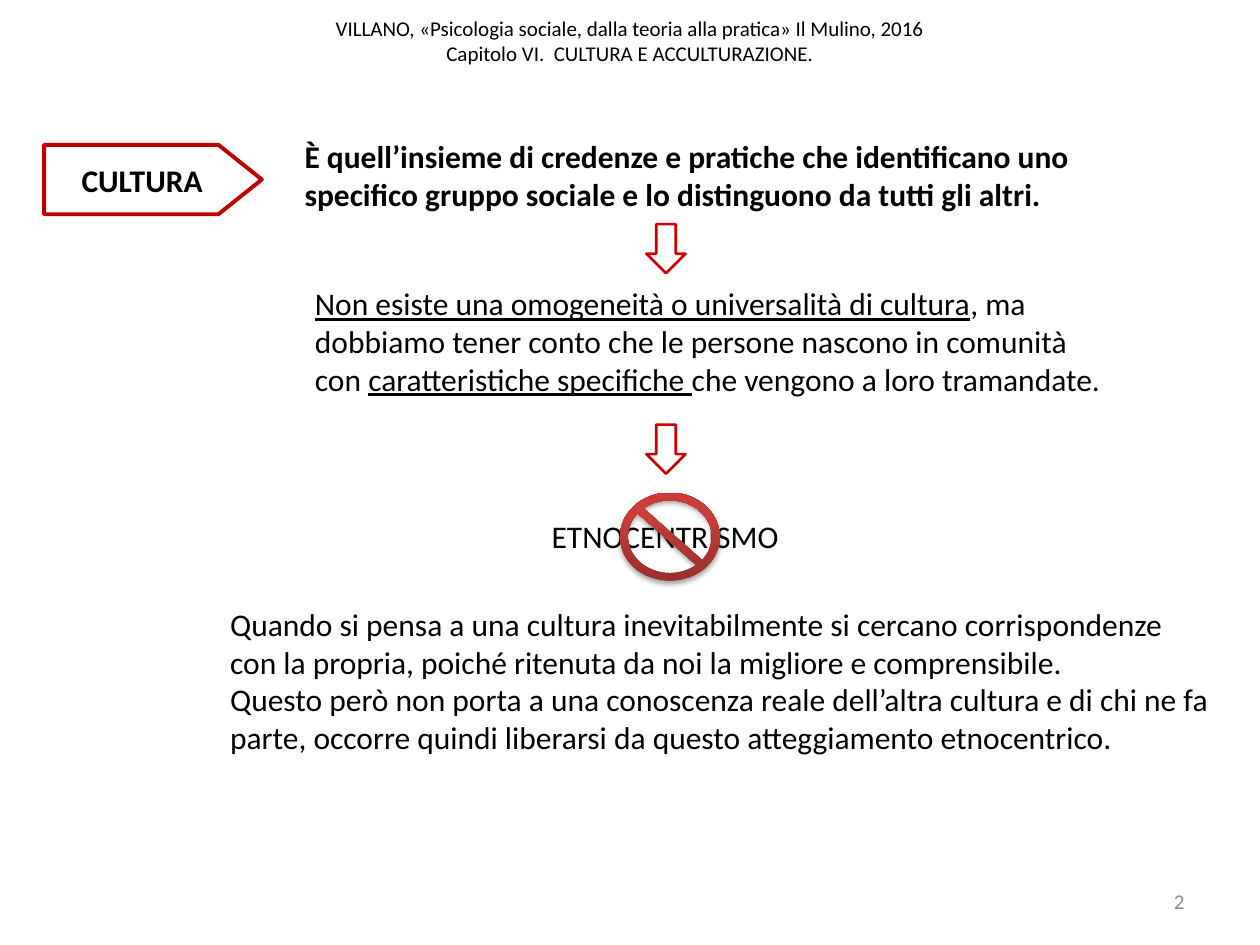
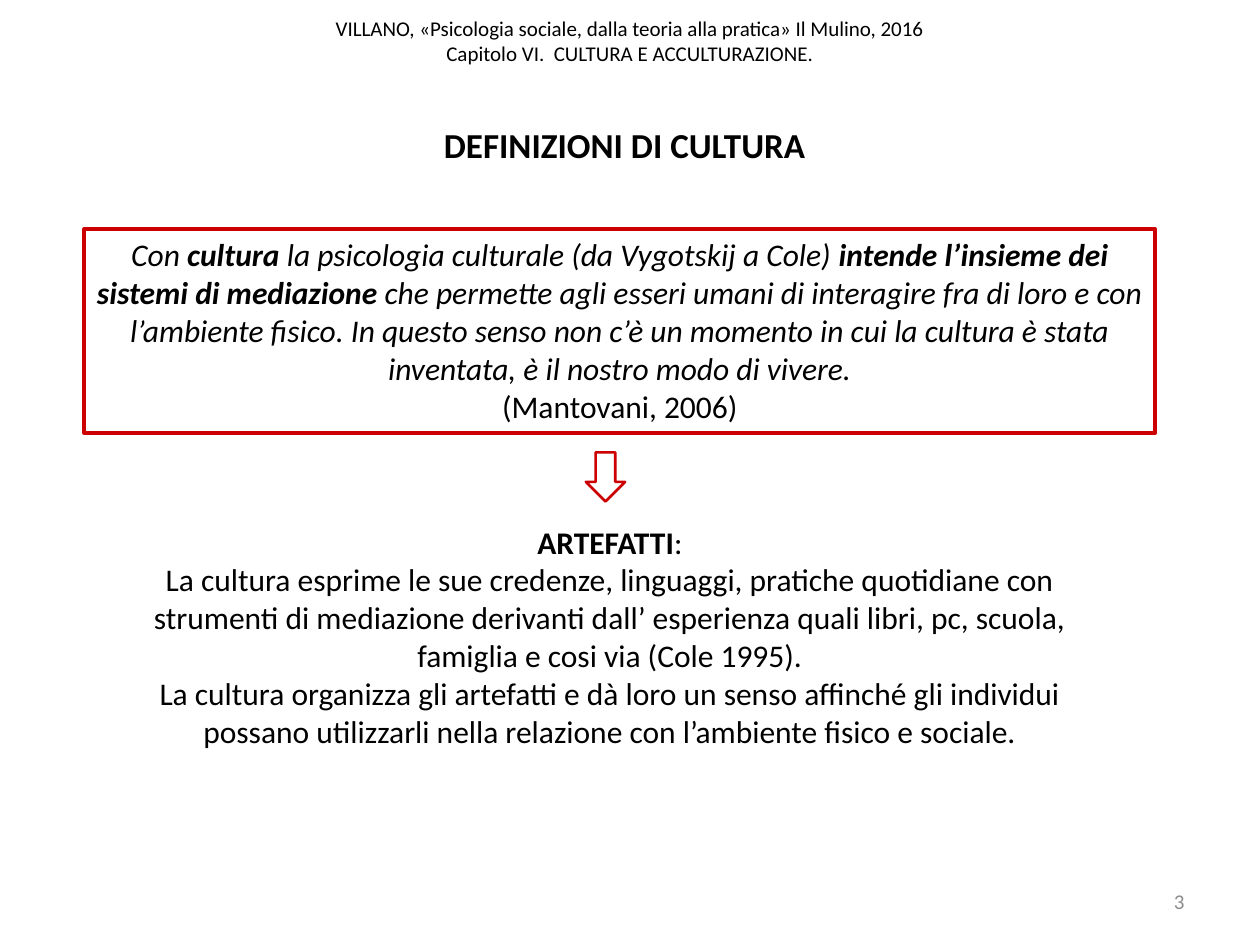
"""Build two slides on culture and acculturation."""
from dataclasses import dataclass

from lxml.etree import SubElement
from pptx import Presentation
from pptx.dml.color import RGBColor
from pptx.enum.shapes import MSO_SHAPE
from pptx.enum.text import MSO_ANCHOR, MSO_AUTO_SIZE, PP_ALIGN
from pptx.oxml import parse_xml
from pptx.oxml.ns import nsdecls, qn
from pptx.util import Cm, Pt

FONT = "Calibri"
BLACK, GREY, RED, DARK_RED = "000000", "8C8C8C", "CC0000", "C00000"
BAN_STOPS = ((0, "9C2F2D"), (80, "CB3E3A"), (100, "CE3B37"))
HEADER = (
    "VILLANO, «Psicologia sociale, dalla teoria alla pratica» Il Mulino, 2016",
    "Capitolo VI.  CULTURA E ACCULTURAZIONE.",
)


@dataclass(frozen=True)
class Box:
    """Place and size in centimetres."""
    left: float
    top: float
    width: float
    height: float

    def lengths(self) -> tuple:
        """Return the four lengths for python-pptx."""
        return Cm(self.left), Cm(self.top), Cm(self.width), Cm(self.height)


@dataclass(frozen=True)
class Run:
    """A piece of text with one style."""
    text: str
    bold: bool = False
    italic: bool = False
    underline: bool = False


@dataclass(frozen=True)
class Style:
    """The look of a whole text."""
    size: int = 18
    color: str = BLACK
    align: PP_ALIGN = PP_ALIGN.LEFT
    anchor: MSO_ANCHOR = MSO_ANCHOR.TOP
    wrap: bool = True


BODY = Style()
CENTERED = Style(align=PP_ALIGN.CENTER)
LABEL = Style(align=PP_ALIGN.CENTER, anchor=MSO_ANCHOR.MIDDLE)
TITLE = Style(size=20, align=PP_ALIGN.CENTER)
HEADER_STYLE = Style(size=12, align=PP_ALIGN.CENTER, anchor=MSO_ANCHOR.MIDDLE)
NUMBER_STYLE = Style(size=12, color=GREY, align=PP_ALIGN.RIGHT, anchor=MSO_ANCHOR.MIDDLE)


def rgb(color: str) -> RGBColor:
    """Turn a hex string into a colour."""
    return RGBColor.from_string(color)


def write(sp, paragraphs: list[list[Run]], style: Style) -> None:
    """Fill a shape with styled paragraphs."""
    tf = sp.text_frame
    tf.auto_size = MSO_AUTO_SIZE.NONE
    tf.word_wrap = style.wrap
    tf.vertical_anchor = style.anchor
    for i, runs in enumerate(paragraphs):
        p = tf.add_paragraph() if i else tf.paragraphs[0]
        p.alignment = style.align
        for run in runs:
            r = p.add_run()
            r.text = run.text
            font = r.font
            font.name, font.size = FONT, Pt(style.size)
            font.bold, font.italic, font.underline = run.bold, run.italic, run.underline
            font.color.rgb = rgb(style.color)


def add_text(s, box: Box, paragraphs: list[list[Run]], style: Style = BODY) -> None:
    """Add a text box."""
    write(s.shapes.add_textbox(*box.lengths()), paragraphs, style)


def add_outline(s, kind: MSO_SHAPE, box: Box, color: str, weight: float):
    """Add an unfilled shape with a coloured line."""
    sp = s.shapes.add_shape(kind, *box.lengths())
    sp.shadow.inherit = False
    sp.fill.background()
    sp.line.color.rgb = rgb(color)
    sp.line.width = Pt(weight)
    return sp


def add_arrow(s, left: float, top: float) -> None:
    """Add a small arrow that points down."""
    sp = add_outline(s, MSO_SHAPE.RIGHT_ARROW, Box(left, top, 0.99, 0.79), RED, 1.5)
    sp.rotation = 90


def add_ban(s, box: Box) -> None:
    """Add the prohibition sign with its gradient and soft shadow."""
    sp = s.shapes.add_shape(MSO_SHAPE.NO_SYMBOL, *box.lengths())
    sp.adjustments[0] = 0.088
    sp.line.fill.background()
    sp.shadow.inherit = False
    stops = "".join(
        f'<a:gs pos="{pos * 1000}"><a:srgbClr val="{color}"/></a:gs>' for pos, color in BAN_STOPS
    )
    sp_pr = sp.element.spPr
    sp_pr.find(qn("a:prstGeom")).addnext(parse_xml(
        f'<a:gradFill {nsdecls("a")} rotWithShape="1"><a:gsLst>{stops}</a:gsLst>'
        '<a:lin ang="16200000" scaled="0"/></a:gradFill>'
    ))
    shadow = SubElement(
        sp_pr.find(qn("a:effectLst")), qn("a:outerShdw"),
        blurRad=str(Pt(3.1)), dist=str(Pt(1.8)), dir="5400000", rotWithShape="0",
    )
    color = SubElement(shadow, qn("a:srgbClr"), val=BLACK)
    SubElement(color, qn("a:alpha"), val="35000")


def add_frame(s, number: int) -> None:
    """Add the running header and the page number."""
    add_text(s, Box(0, -0.28, 25.4, 2.21), [[Run(line)] for line in HEADER], HEADER_STYLE)
    add_text(s, Box(18.21, 17.65, 5.92, 1.02), [[Run(str(number))]], NUMBER_STYLE)


def build_culture(prs) -> None:
    """Build the slide on culture and ethnocentrism."""
    s = prs.slides.add_slide(prs.slide_layouts.get_by_name("Blank"))
    add_frame(s, 2)
    tag = add_outline(s, MSO_SHAPE.PENTAGON, Box(0.89, 2.92, 4.39, 1.4), DARK_RED, 2.25)
    tag.adjustments[0] = 0.626
    write(tag, [[Run("CULTURA", bold=True)]], LABEL)
    add_text(s, Box(5.89, 2.64, 18.24, 1.8), [[Run(
        "È quell’insieme di credenze e pratiche che identificano uno specifico gruppo "
        "sociale e lo distinguono da tutti gli altri.", bold=True)]])
    add_text(s, Box(6.1, 5.61, 16.41, 2.57), [[
        Run("Non esiste una omogeneità o universalità di cultura", underline=True),
        Run(", ma dobbiamo tener conto che le persone nascono in comunità con "),
        Run("caratteristiche specifiche ", underline=True),
        Run("che vengono a loro tramandate."),
    ]])
    for top in (4.62, 8.66):
        add_arrow(s, 12.93, top)
    add_text(s, Box(10.87, 10.29, 5.13, 1.02), [[Run("ETNOCENTRISMO")]], Style(wrap=False))
    add_ban(s, Box(12.5, 9.93, 2.01, 1.78))
    add_text(s, Box(4.39, 12.07, 20.24, 3.33), [
        [Run("Quando si pensa a una cultura inevitabilmente si cercano corrispondenze con la "
             "propria, poiché ritenuta da noi la migliore e comprensibile.")],
        [Run("Questo però non porta a una conoscenza reale dell’altra cultura e di chi ne fa "
             "parte, occorre quindi liberarsi da questo atteggiamento etnocentrico.")],
    ])


def build_definitions(prs) -> None:
    """Build the slide on the definitions of culture."""
    s = prs.slides.add_slide(prs.slide_layouts.get_by_name("Title Only"))
    add_frame(s, 3)
    title = s.shapes.title
    title.left, title.top, title.width, title.height = Box(4.29, 2.36, 16.61, 1.12).lengths()
    write(title, [[Run("DEFINIZIONI DI CULTURA", bold=True)]], TITLE)
    quote = add_outline(s, MSO_SHAPE.RECTANGLE, Box(1.7, 4.62, 21.59, 4.11), RED, 2.25)
    write(quote, [
        [
            Run("Con ", italic=True),
            Run("cultura", bold=True, italic=True),
            Run(" la psicologia culturale (da Vygotskij a Cole) ", italic=True),
            Run("intende l’insieme dei sistemi di mediazione", bold=True, italic=True),
            Run(" che permette agli esseri umani di interagire fra di loro e con l’ambiente "
                "fisico. In questo senso non c’è un momento in cui la cultura è stata "
                "inventata, è il nostro modo di vivere.", italic=True),
        ],
        [Run("(Mantovani, 2006)")],
    ], CENTERED)
    add_text(s, Box(2.11, 10.41, 20.37, 5.64), [
        [Run("ARTEFATTI", bold=True), Run(":")],
        [Run("La cultura esprime le sue credenze, linguaggi, pratiche quotidiane con strumenti "
             "di mediazione derivanti dall’ esperienza quali libri, pc, scuola, famiglia e "
             "cosi via (Cole 1995).")],
        [Run("La cultura organizza gli artefatti e dà loro un senso affinché gli individui "
             "possano utilizzarli nella relazione con l’ambiente fisico e sociale.")],
    ], CENTERED)
    add_arrow(s, 11.71, 9.22)


def main() -> None:
    """Build and save the presentation."""
    prs = Presentation()
    prs.slide_width, prs.slide_height = Cm(25.4), Cm(19.05)
    build_culture(prs)
    build_definitions(prs)
    prs.save("out.pptx")


if __name__ == "__main__":
    main()
